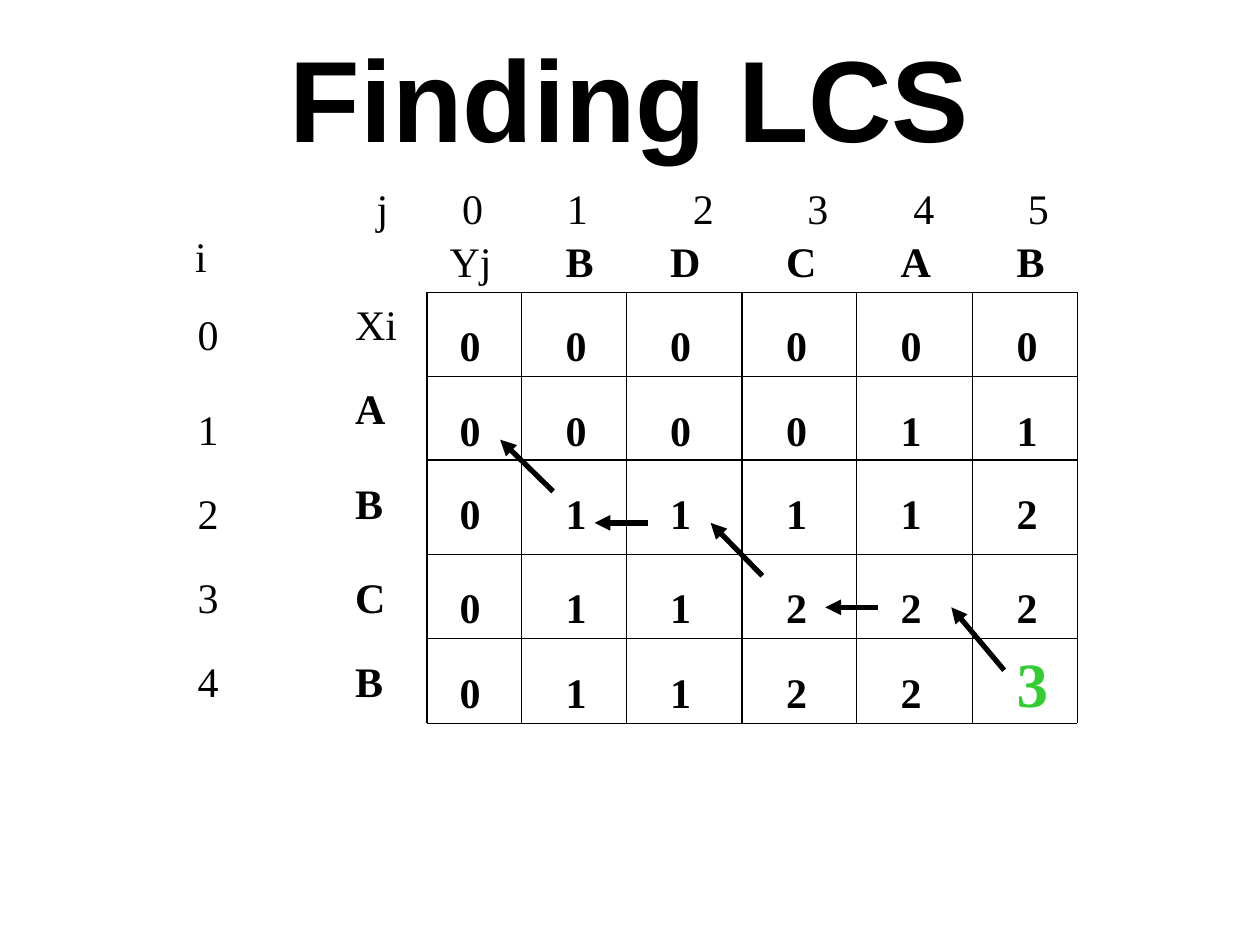
from dataclasses import dataclass

from lxml import etree
from pptx import Presentation
from pptx.dml.color import RGBColor
from pptx.enum.shapes import MSO_CONNECTOR
from pptx.enum.text import MSO_ANCHOR, MSO_AUTO_SIZE, PP_ALIGN
from pptx.oxml.ns import qn
from pptx.util import Inches, Pt

STRAIGHT = MSO_CONNECTOR.STRAIGHT
MIDDLE = MSO_ANCHOR.MIDDLE
TOP = MSO_ANCHOR.TOP
GROW = MSO_AUTO_SIZE.SHAPE_TO_FIT_TEXT
FIXED = MSO_AUTO_SIZE.NONE
LEFT = PP_ALIGN.LEFT
CENTER = PP_ALIGN.CENTER


@dataclass(frozen=True)
class Theme:
    ink: RGBColor = RGBColor(0x00, 0x00, 0x00)
    answer: RGBColor = RGBColor(0x33, 0xCC, 0x33)
    title_font: str = "Arial"
    body_font: str = "Times New Roman"
    title_size: int = 66
    body_size: int = 24
    answer_size: int = 36
    grid_width: float = 0.75
    arrow_width: float = 3


COLUMN_LINES = [3.39, 4.14, 4.97, 5.89, 6.8, 7.72, 8.55]
ROW_LINES = [2.32, 2.99, 3.65, 4.4, 5.07, 5.74]
CELL_LEFTS = [3.55] + [line + 0.25 for line in COLUMN_LINES[1:-1]]
CELL_TOPS = [line + 0.17 for line in ROW_LINES[:-1]]

INDEX_LEFT, INDEX_TOPS = 1.47, [2.4, 3.15, 3.82, 4.49, 5.15]
LETTER_LEFT, LETTER_TOPS = 2.72, [2.32, 2.99, 3.74, 4.49, 5.15]
HEADER_TOP = 1.82
COLUMN_INDEX_TABS = [0.68, 1.51, 2.51, 3.42, 4.26, 5.17]
DIGIT_WIDTH, LETTER_WIDTH, PAIR_WIDTH = 0.37, 0.44, 0.53
LABEL_HEIGHT = 0.5

X_LETTERS = "ABCB"
Y_LETTERS = "BDCAB"
LENGTHS = ["000000", "000011", "011112", "011222", "011223"]
TRACEBACK = [
    ((7.97, 5.32), (7.55, 4.82)),
    ((6.97, 4.82), (6.55, 4.82)),
    ((6.05, 4.57), (5.64, 4.15)),
    ((5.14, 4.15), (4.72, 4.15)),
    ((4.39, 3.9), (3.97, 3.49)),
]


class SlideBuilder:
    def __init__(self, slide, theme):
        self.slide = slide
        self.theme = theme

    def text(self, text, left, top, width, height=LABEL_HEIGHT, *, wrap=False,
             auto_size=GROW, anchor=TOP, align=LEFT, **font_format):
        shape = self.slide.shapes.add_textbox(
            Inches(left), Inches(top), Inches(width), Inches(height))
        frame = shape.text_frame
        frame_format = {"word_wrap": wrap, "auto_size": auto_size,
                        "vertical_anchor": anchor}
        for name, value in frame_format.items():
            setattr(frame, name, value)
        paragraph = frame.paragraphs[0]
        paragraph.alignment = align
        run = paragraph.add_run()
        run.text = text
        values = {"name": self.theme.body_font,
                  "size": Pt(self.theme.body_size), "bold": False}
        color = font_format.pop("color", self.theme.ink)
        for name, value in (values | font_format).items():
            setattr(run.font, name, value)
        run.font.color.rgb = color
        return paragraph

    def tabbed_text(self, words, stops, left, top, width):
        """Place the first word at the left and each other word at a tab stop."""
        paragraph = self.text("\t".join(words), left, top, width, wrap=True)
        properties = paragraph._p.get_or_add_pPr()
        tab_list = etree.SubElement(properties, qn("a:tabLst"))
        for stop in stops:
            etree.SubElement(tab_list, qn("a:tab"),
                             pos=str(Inches(stop)), algn="l")

    def line(self, start, end, width):
        connector = self.slide.shapes.add_connector(
            STRAIGHT, *(Inches(value) for value in (*start, *end)))
        connector.line.color.rgb = self.theme.ink
        connector.line.width = Pt(width)
        etree.SubElement(connector._element.spPr, qn("a:effectLst"))
        return connector

    def arrow(self, start, end):
        connector = self.line(start, end, self.theme.arrow_width)
        etree.SubElement(connector.line._get_or_add_ln(), qn("a:tailEnd"),
                         type="triangle")

    def grid(self, columns, rows):
        for x in columns:
            self.line((x, rows[0]), (x, rows[-1]), self.theme.grid_width)
        for y in rows:
            self.line((columns[0], y), (columns[-1], y), self.theme.grid_width)


def add_labels(builder):
    builder.tabbed_text("j012345", COLUMN_INDEX_TABS, 2.89, 1.4, 5.63)
    builder.text("i", 1.45, 1.78, 0.29)
    for index, top in enumerate(INDEX_TOPS):
        builder.text(str(index), INDEX_LEFT, top, DIGIT_WIDTH)
    builder.text("Xi", LETTER_LEFT, LETTER_TOPS[0], PAIR_WIDTH)
    for letter, top in zip(X_LETTERS, LETTER_TOPS[1:]):
        builder.text(letter, LETTER_LEFT, top, LETTER_WIDTH, bold=True)
    builder.text("Yj", 3.47, HEADER_TOP, PAIR_WIDTH)
    for letter, left in zip(Y_LETTERS, CELL_LEFTS[1:]):
        builder.text(letter, left, HEADER_TOP, LETTER_WIDTH, bold=True)


def add_lengths(builder):
    theme = builder.theme
    for row, top in zip(LENGTHS, CELL_TOPS):
        for value, left in zip(row, CELL_LEFTS):
            if value == "3":
                builder.text(value, left, ROW_LINES[-2], 0.45, 0.7, bold=True,
                             size=Pt(theme.answer_size), color=theme.answer)
            else:
                builder.text(value, left, top, DIGIT_WIDTH, bold=True)


def main():
    presentation = Presentation()
    presentation.slide_width = Inches(10)
    presentation.slide_height = Inches(7.5)
    theme = Theme()
    slide = presentation.slides.add_slide(presentation.slide_layouts[6])
    builder = SlideBuilder(slide, theme)

    builder.text("Finding LCS", 0.5, 0.14, 9, 1.25, wrap=True, auto_size=FIXED,
                 anchor=MIDDLE, align=CENTER, name=theme.title_font,
                 size=Pt(theme.title_size), bold=True)
    builder.grid(COLUMN_LINES, ROW_LINES)
    add_labels(builder)
    add_lengths(builder)
    for start, end in TRACEBACK:
        builder.arrow(start, end)

    presentation.save("out.pptx")


if __name__ == "__main__":
    main()
